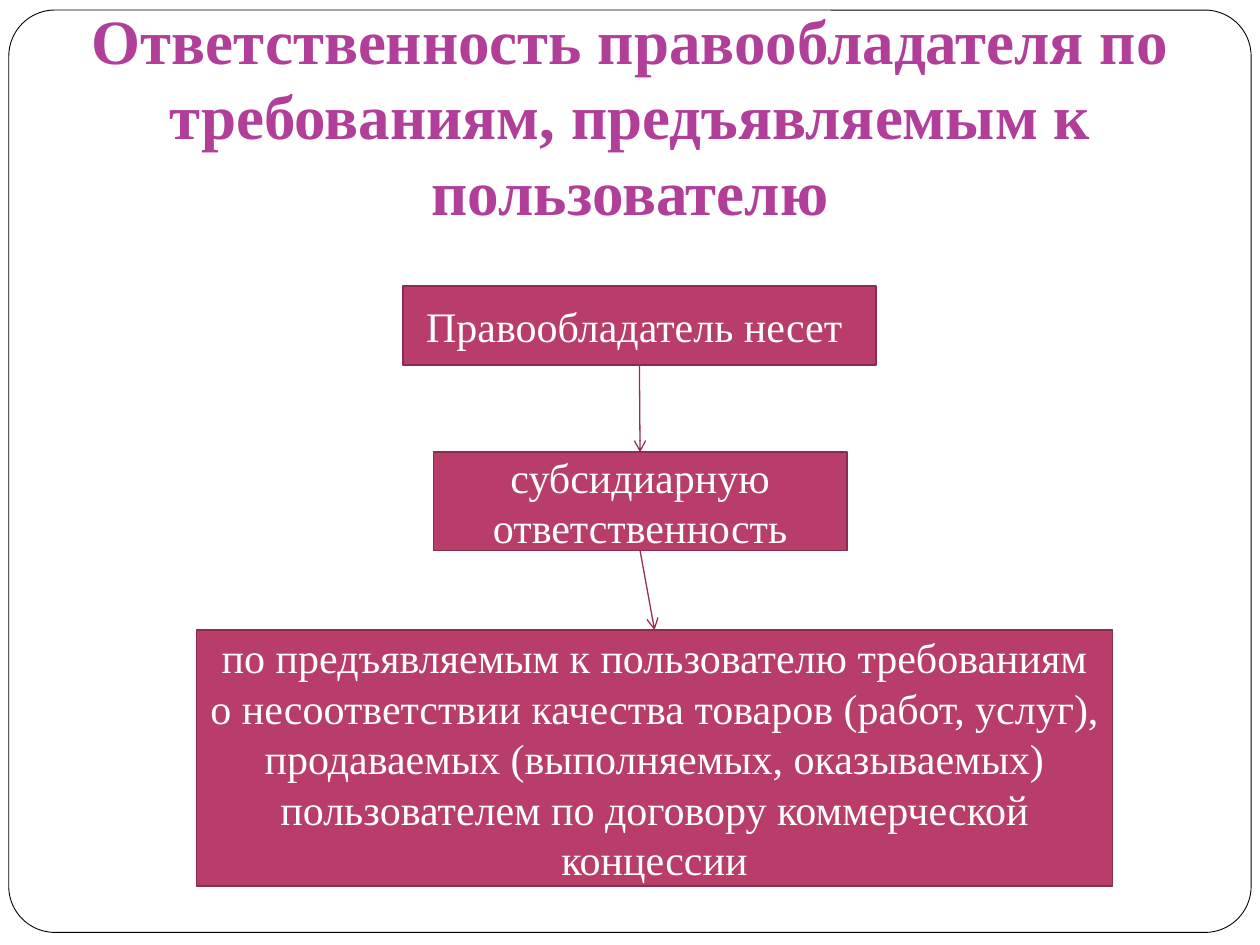
from itertools import pairwise

from lxml.etree import SubElement
from pptx import Presentation
from pptx.dml.color import RGBColor
from pptx.enum.shapes import MSO_CONNECTOR, MSO_SHAPE
from pptx.enum.text import MSO_ANCHOR, PP_ALIGN
from pptx.oxml.ns import qn
from pptx.util import Inches, Pt

# Content
TITLE = "Ответственность правообладателя по требованиям, предъявляемым к пользователю"
STEPS = [  # text, (left, top, width, height)
    ("Правообладатель несет ", (3.2, 2.27, 3.75, 0.63)),
    ("субсидиарную ответственность", (3.44, 3.59, 3.28, 0.78)),
    ("по предъявляемым к пользователю требованиям о несоответствии качества "
     "товаров (работ, услуг), продаваемых (выполняемых, оказываемых) "
     "пользователем по договору коммерческой концессии", (1.56, 5, 7.27, 2.03)),
]
COLORS = {
    "paper": "FFFFFF", "frame": "000000", "title": "B13F9A",
    "step": "B83D68", "border": "882D4D", "arrow": "982C52", "text": "FFFFFF",
}
FONT = "Times New Roman"


def color(name):
    return RGBColor.from_string(COLORS[name])


def add_panel(page, kind, area, fill, line, width):
    panel = page.shapes.add_shape(kind, *map(Inches, area))
    panel.shadow.inherit = False
    panel.fill.solid()
    panel.fill.fore_color.rgb = color(fill)
    panel.line.color.rgb = color(line)
    panel.line.width = Pt(width)
    return panel


def write(box, text, size, ink, bold=False):
    frame = box.text_frame
    frame.word_wrap = True
    frame.vertical_anchor = MSO_ANCHOR.MIDDLE
    para = frame.paragraphs[0]
    para.alignment = PP_ALIGN.CENTER
    span = para.add_run()
    span.text = text
    span.font.name = FONT
    span.font.size = Pt(size)
    span.font.bold = bold
    span.font.color.rgb = color(ink)


def add_arrow(page, upper, lower):
    arrow = page.shapes.add_connector(MSO_CONNECTOR.STRAIGHT, 0, 0, 0, 0)
    arrow.begin_connect(upper, 2)  # bottom middle
    arrow.end_connect(lower, 0)  # top middle
    arrow.line.color.rgb = color("arrow")
    arrow.line.width = Pt(0.75)
    SubElement(arrow.line._get_or_add_ln(), qn("a:tailEnd"), type="arrow")
    SubElement(arrow._element.spPr, qn("a:effectLst"))


deck = Presentation()
deck.slide_width, deck.slide_height = Inches(10), Inches(7.5)
page = deck.slides.add_slide(deck.slide_layouts[6])

# Rounded page frame
border = add_panel(page, MSO_SHAPE.ROUNDED_RECTANGLE, (0.07, 0.08, 9.86, 7.32),
                   "paper", "frame", 0.5)
border.adjustments[0] = 0.05

# Title
heading = page.shapes.add_textbox(0, 0, Inches(10), Inches(1.87))
heading.text_frame.margin_bottom = Inches(0.1)
write(heading, TITLE, 36, "title", bold=True)

# Steps, joined from top to bottom
boxes = []
for text, area in STEPS:
    box = add_panel(page, MSO_SHAPE.RECTANGLE, area, "step", "border", 1)
    write(box, text, 24, "text")
    boxes.append(box)
for upper, lower in pairwise(boxes):
    add_arrow(page, upper, lower)

deck.save("out.pptx")
